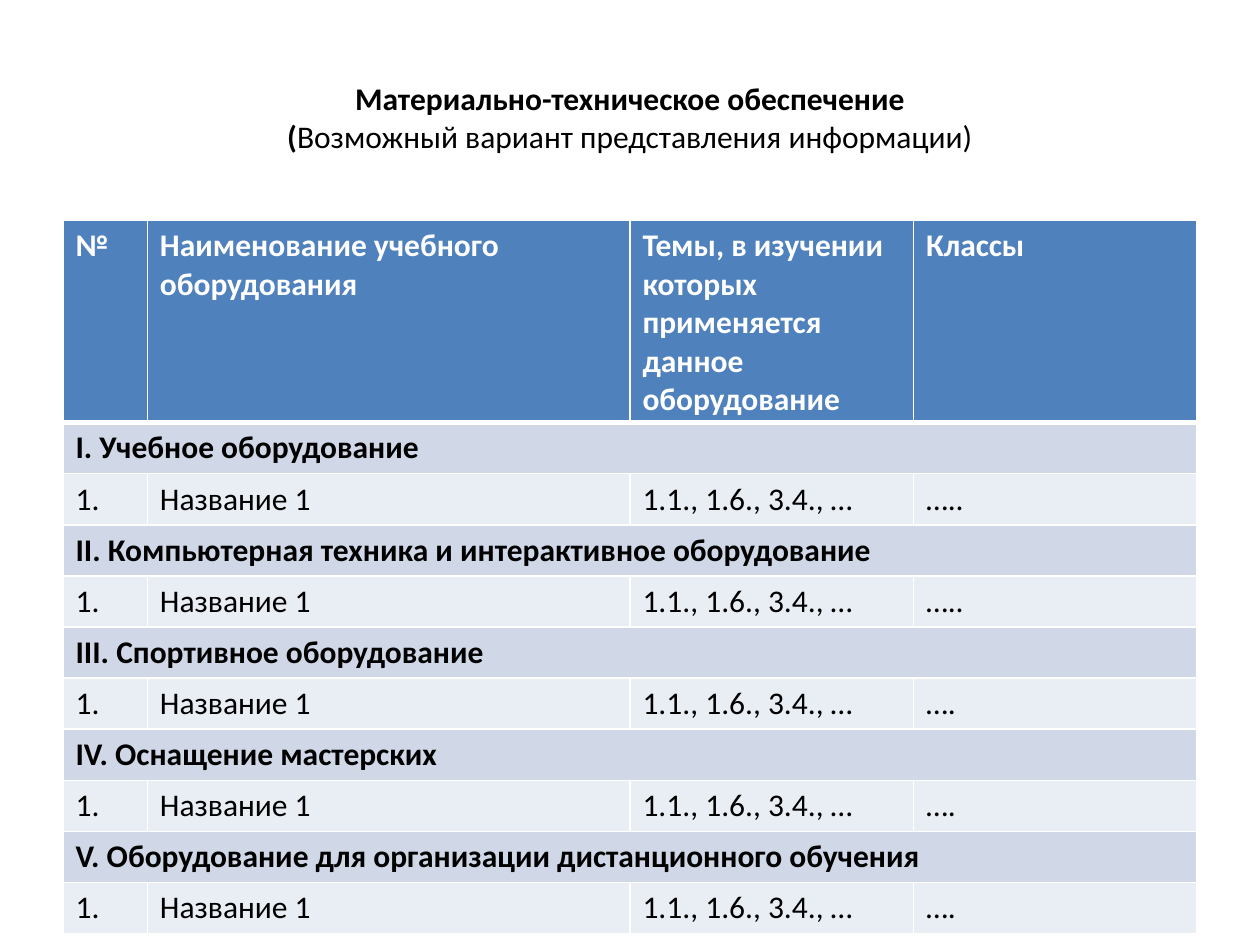
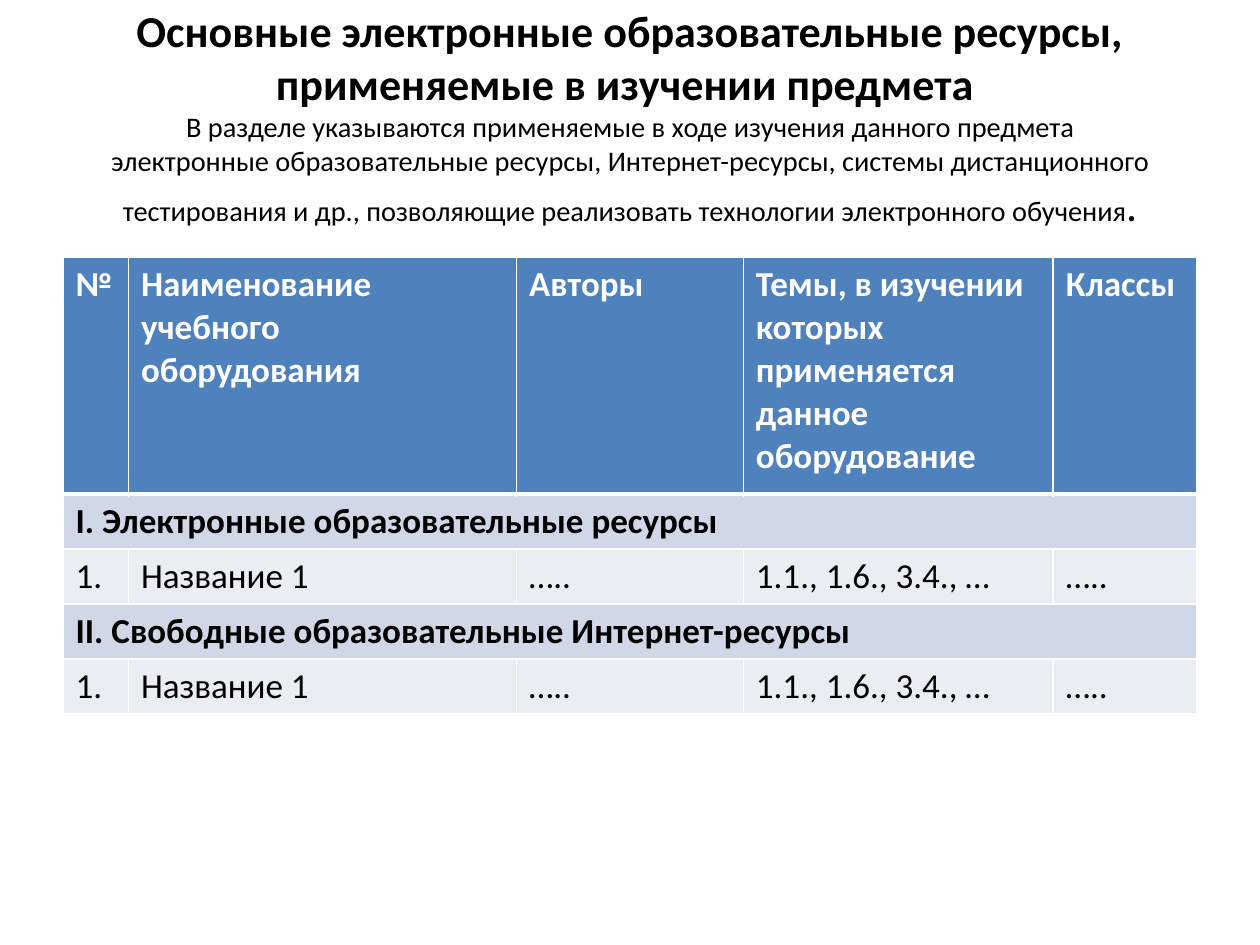
import pptx
import pptx.util
import pptx.dml.color
import pptx.enum.text
import pptx.oxml
import pptx.oxml.ns
from dataclasses import dataclass

# Content
NAME, TOPICS = "Название 1", "1.1., 1.6., 3.4., …"

GEAR = {
    "title": [
        ("Материально-техническое обеспечение\n(", 18, True),
        ("Возможный вариант представления информации)", 18, False),
    ],
    "top": 126,
    "size": 18,
    "cols": [48.24, 275.76, 162, 162],
    "heights": (115.5, 29.2),
    "head": [
        "№",
        "Наименование учебного оборудования",
        "Темы, в изучении\nкоторых\nприменяется\nданное\nоборудование",
        "Классы",
    ],
    "groups": [
        ("I. Учебное оборудование", ["1.", NAME, TOPICS, "….."]),
        ("II. Компьютерная техника и интерактивное оборудование",
         ["1.", NAME, TOPICS, "….."]),
        ("III. Спортивное оборудование", ["1.", NAME, TOPICS, "…."]),
        ("IV. Оснащение мастерских", ["1.", NAME, TOPICS, "…."]),
        ("V. Оборудование для организации дистанционного обучения",
         ["1.", NAME, TOPICS, "…."]),
    ],
}

WEB = {
    "title": [
        ("Основные электронные образовательные ресурсы, "
         "применяемые в изучении предмета \n", 25.2, True),
        ("В разделе указываются применяемые в ходе изучения данного предмета\n"
         "электронные образовательные ресурсы, Интернет-ресурсы, "
         "системы дистанционного\n"
         "тестирования и др., позволяющие реализовать технологии "
         "электронного обучения", 16.2, False),
        (".", 25.2, False),
    ],
    "top": 147,
    "size": 20,
    "cols": [37.4, 221.8, 129.6, 177.1, 82.1],
    "heights": (135.4, 31.4),
    "head": [
        "№",
        "Наименование учебного\nоборудования",
        "Авторы",
        "Темы, в изучении\nкоторых применяется\nданное оборудование",
        "Классы",
    ],
    "groups": [
        ("I. Электронные образовательные ресурсы",
         ["1.", NAME, "…..", TOPICS, "….."]),
        ("II. Свободные образовательные Интернет-ресурсы",
         ["1.", NAME, "…..", TOPICS, "….."]),
    ],
}


# Shared look
@dataclass(frozen=True)
class Theme:
    font: str = "Calibri"
    ink: str = "000000"
    light: str = "FFFFFF"
    head: str = "4F81BD"
    group: str = "D0D8E8"
    item: str = "E9EDF4"
    thin: float = 1
    thick: float = 3
    left: float = 36
    width: float = 648
    title_top: float = 21.6
    title_high: float = 90


THEME = Theme()
Pt = pptx.util.Pt


def rgb(code):
    return pptx.dml.color.RGBColor.from_string(code)


def add_title(slide, parts):
    box = slide.shapes.add_textbox(Pt(THEME.left), Pt(THEME.title_top),
                                   Pt(THEME.width), Pt(THEME.title_high))
    frame = box.text_frame
    frame.word_wrap = True
    frame.vertical_anchor = pptx.enum.text.MSO_ANCHOR.MIDDLE
    para = frame.paragraphs[0]
    para.alignment = pptx.enum.text.PP_ALIGN.CENTER
    para.font.name = THEME.font
    para.font.color.rgb = rgb(THEME.ink)
    para.font.size = Pt(min(size for _, size, _ in parts))
    for text, size, bold in parts:
        for i, line in enumerate(text.split("\n")):
            if i:
                para.add_line_break()
            if line:
                run = para.add_run()
                run.text = line
                run.font.size, run.font.bold = Pt(size), bold


def add_edges(cell, top, bottom):
    props = cell._tc.get_or_add_tcPr()
    edges = {"L": THEME.thin, "R": THEME.thin, "T": top, "B": bottom}
    for i, (side, width) in enumerate(edges.items()):
        props.insert(i, pptx.oxml.parse_xml(
            f'<a:ln{side} {pptx.oxml.ns.nsdecls("a")} w="{Pt(width)}">'
            f'<a:solidFill><a:srgbClr val="{THEME.light}"/></a:solidFill>'
            f'</a:ln{side}>'))


def fill_cell(cell, text, size, fill, ink, bold):
    cell.text = text
    cell.fill.solid()
    cell.fill.fore_color.rgb = rgb(fill)
    for para in cell.text_frame.paragraphs:
        para.font.name, para.font.size = THEME.font, Pt(size)
        para.font.bold = bold
        para.font.color.rgb = rgb(ink)


def add_grid(slide, data):
    # Each row is its texts, fill, ink and weight
    rows = [(data["head"], THEME.head, THEME.light, True)]
    for name, item in data["groups"]:
        blank = [""] * (len(item) - 1)
        rows.append(([name] + blank, THEME.group, THEME.ink, True))
        rows.append((item, THEME.item, THEME.ink, False))

    cols, (first, rest) = data["cols"], data["heights"]
    high = first + rest * (len(rows) - 1)
    grid = slide.shapes.add_table(len(rows), len(cols), Pt(THEME.left),
                                  Pt(data["top"]), Pt(THEME.width),
                                  Pt(high)).table
    for col, width in zip(grid.columns, cols):
        col.width = Pt(width)

    for r, (texts, fill, ink, bold) in enumerate(rows):
        grid.rows[r].height = Pt(rest if r else first)
        # The thick rule lies between the head and the body
        top = THEME.thick if r == 1 else THEME.thin
        bottom = THEME.thin if r else THEME.thick
        for c, text in enumerate(texts):
            cell = grid.cell(r, c)
            fill_cell(cell, text, data["size"], fill, ink, bold)
            add_edges(cell, top, bottom)
        if fill == THEME.group:
            grid.cell(r, 0).merge(grid.cell(r, len(cols) - 1))


def main():
    deck = pptx.Presentation()
    deck.slide_width, deck.slide_height = Pt(720), Pt(540)
    for data in (GEAR, WEB):
        slide = deck.slides.add_slide(deck.slide_layouts[6])
        add_title(slide, data["title"])
        add_grid(slide, data)
    deck.save("out.pptx")


if __name__ == "__main__":
    main()
